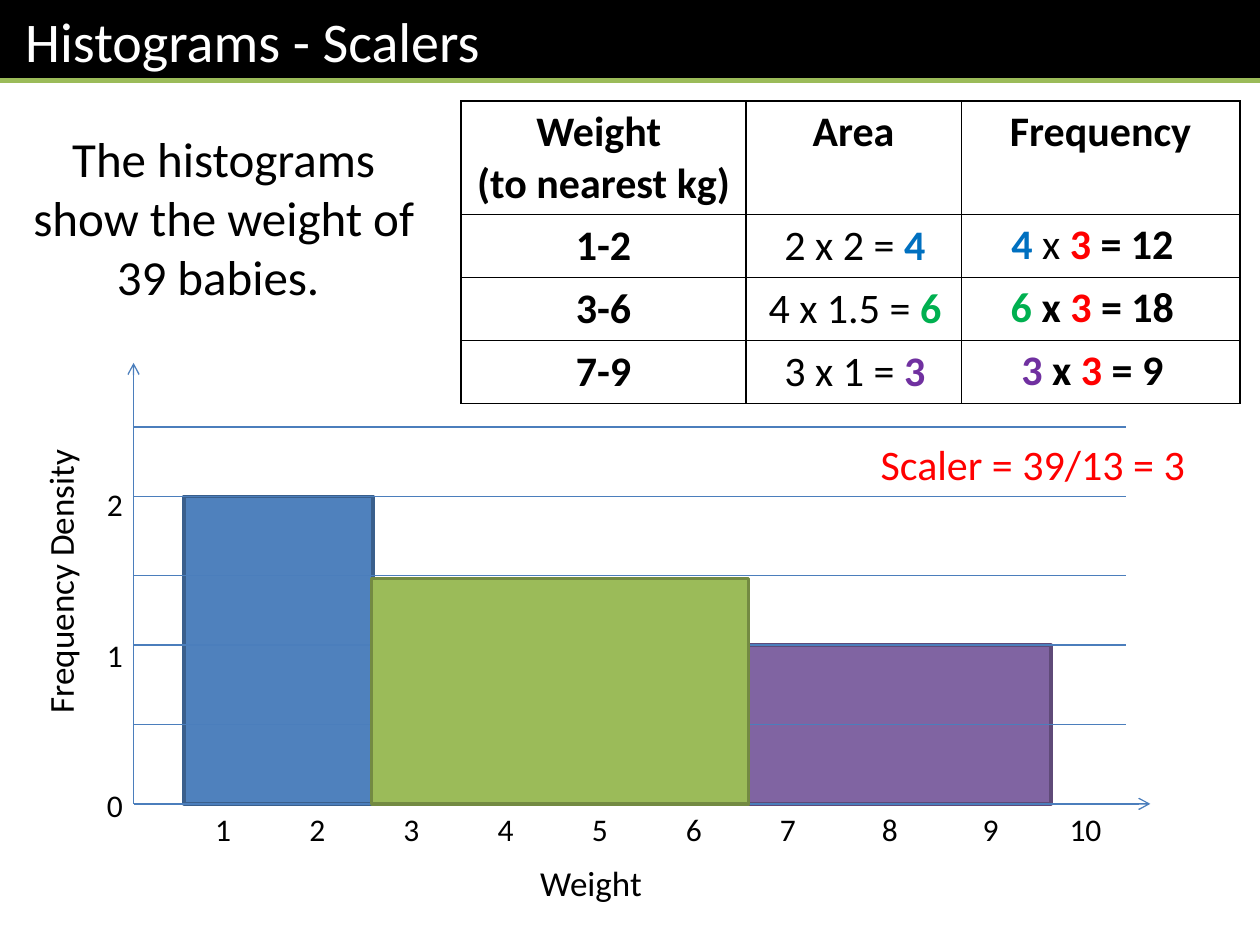
from dataclasses import dataclass
from typing import NamedTuple

from lxml import etree
from pptx import Presentation
from pptx.dml.color import RGBColor
from pptx.enum.shapes import MSO_CONNECTOR, MSO_SHAPE
from pptx.enum.text import MSO_ANCHOR, MSO_AUTO_SIZE, PP_ALIGN
from pptx.oxml.ns import qn
from pptx.util import Inches, Pt

LEFT, MID = PP_ALIGN.LEFT, PP_ALIGN.CENTER
TOP, CENTRE, BOTTOM = MSO_ANCHOR.TOP, MSO_ANCHOR.MIDDLE, MSO_ANCHOR.BOTTOM
FIXED = MSO_AUTO_SIZE.NONE
RECT, LINE = MSO_SHAPE.RECTANGLE, MSO_CONNECTOR.STRAIGHT

BLACK = RGBColor(0x00, 0x00, 0x00)
WHITE = RGBColor(0xFF, 0xFF, 0xFF)
RED = RGBColor(0xFF, 0x00, 0x00)
BLUE = RGBColor(0x00, 0x70, 0xC0)
GREEN = RGBColor(0x00, 0xB0, 0x50)
PURPLE = RGBColor(0x70, 0x30, 0xA0)
AXIS = RGBColor(0x4B, 0x7E, 0xBC)
LIME = RGBColor(0x9B, 0xBB, 0x59)
FONT = "Calibri"

# The slide is a grid of 100 columns by 75 rows
COLS, ROWS = 100, 75
WIDE, HIGH = Inches(10), Inches(7.5)


def col(n: float) -> int:
    return round(WIDE * n / COLS)


def row(n: float) -> int:
    return round(HIGH * n / ROWS)


class Box(NamedTuple):
    x: float
    y: float
    w: float
    h: float

    def place(self) -> tuple:
        return col(self.x), row(self.y), col(self.w), row(self.h)


class Span(NamedTuple):
    text: str
    color: RGBColor = BLACK
    bold: bool = False


@dataclass
class Bar:
    x: float
    w: float
    top: float
    fill: RGBColor
    edge: RGBColor


@dataclass
class Label:
    box: Box
    lines: list
    size: int
    color: RGBColor = BLACK
    align: PP_ALIGN = LEFT
    anchor: MSO_ANCHOR = TOP
    turn: int = 0
    gap: float = 0


@dataclass
class Grid:
    x: float
    y: float
    widths: list
    heights: list
    cells: list  # rows of cells, each a list of paragraphs made of spans
    ruled: bool = False


# Histogram: axes meet at (ZERO_X, ZERO_Y)
ZERO_X, ZERO_Y = 10.6, 63.8
RULES = [57.5, 51.2, 45.7, 39.4, 33.9]
BLUE_BAR = Bar(14.6, 15, 39.4, RGBColor(0x4F, 0x81, 0xBD), RGBColor(0x3A, 0x5F, 0x8C))
LIME_BAR = Bar(29.5, 29.9, 45.9, LIME, RGBColor(0x73, 0x8A, 0x42))
PLUM_BAR = Bar(59.4, 24, 51.2, RGBColor(0x80, 0x64, 0xA2), RGBColor(0x5F, 0x4A, 0x78))
TABS = [7.47 * n for n in range(1, 7)] + [52.9, 60.9, 67.8]

LABELS = [
    Label(Box(7.5, 31.6, 4.7, 34.3), ["2", "1", "0"], 18, anchor=BOTTOM, gap=64.5),
    Label(Box(-8.2, 42.4, 26, 4.4), ["Frequency Density"], 20, turn=270),
    Label(Box(41, 67.9, 11.8, 4.4), ["Weight"], 20, align=MID),
    Label(Box(1.2, 9.7, 33.1, 15.1),
          ["The histograms show the weight of 39 babies. "], 28, align=MID),
    Label(Box(68.9, 34.3, 26.8, 5), ["Scaler = 39/13 = 3"], 24, RED),
]


def head(*lines: str) -> list:
    return [[Span(text, bold=True)] for text in lines]


def area(sum_: str, value: str, color: RGBColor) -> list:
    return [[[Span(f"{sum_} = "), Span(value, color, True)]]]


def freq(value: str, total: str, color: RGBColor, bold: bool = True) -> list:
    return [[[Span(value, color, True), Span(" x ", bold=bold),
              Span("3 ", RED, True), Span(f"= {total}", bold=True)]]]


GRIDS = [
    Grid(36.6, 8, [22.6, 17.1, 22.1], [9, 5, 5, 5],
         [[head("Weight ", "(to nearest kg)"), head("Area"), head("Frequency")]]
         + [[head(name), [], []] for name in ("1-2", "3-6", "7-9")], ruled=True),
    Grid(59.7, 17, [16.3], [5, 5, 5],
         [area("2 x 2", "4", BLUE), area("4 x 1.5", "6", GREEN),
          area("3 x 1", "3", PURPLE)]),
    Grid(76.1, 16.9, [21.2], [5, 5, 5],
         [freq("4", "12", BLUE, False), freq("6", "18", GREEN),
          freq("3", "9", PURPLE)]),
]


def style(para, size: int, color: RGBColor, align: PP_ALIGN) -> None:
    para.alignment = align
    para.font.name, para.font.size = FONT, Pt(size)
    para.font.color.rgb = color


def write(slide, item: Label):
    shape = slide.shapes.add_textbox(*item.box.place())
    shape.rotation = item.turn
    frame = shape.text_frame
    frame.word_wrap, frame.vertical_anchor = True, item.anchor
    frame.text = "\n".join(item.lines)
    for n, para in enumerate(frame.paragraphs):
        style(para, item.size, item.color, item.align)
        if n and item.gap:
            para.space_before = Pt(item.gap)
    return shape


def stroke(slide, x1: float, y1: float, x2: float, y2: float,
           color: RGBColor = AXIS, width: float = 0.75, arrow: bool = False) -> None:
    line = slide.shapes.add_connector(LINE, col(x1), row(y1), col(x2), row(y2))
    line.line.color.rgb, line.line.width = color, Pt(width)
    if arrow:
        etree.SubElement(line.line._get_or_add_ln(), qn("a:tailEnd"), type="arrow")
    etree.SubElement(line._element.spPr, qn("a:effectLst"))


def draw_bar(slide, bar: Bar) -> None:
    box = Box(bar.x, bar.top, bar.w, ZERO_Y - bar.top)
    shape = slide.shapes.add_shape(RECT, *box.place())
    shape.shadow.inherit = False
    shape.fill.solid()
    shape.fill.fore_color.rgb = bar.fill
    shape.line.color.rgb, shape.line.width = bar.edge, Pt(2)


def border(cell, ruled: bool) -> None:
    props = cell._tc.get_or_add_tcPr()
    for side in ("lnL", "lnR", "lnT", "lnB"):
        edge = etree.SubElement(props, qn(f"a:{side}"), w=str(Pt(1)))
        paint = etree.SubElement(edge, qn("a:solidFill" if ruled else "a:noFill"))
        if ruled:
            etree.SubElement(paint, qn("a:srgbClr"), val=str(BLACK))


def draw_grid(slide, grid: Grid) -> None:
    box = Box(grid.x, grid.y, sum(grid.widths), sum(grid.heights))
    table = slide.shapes.add_table(
        len(grid.heights), len(grid.widths), *box.place()).table
    table.first_row = table.horz_banding = False
    for n, width in enumerate(grid.widths):
        table.columns[n].width = col(width)
    for r, (height, cells) in enumerate(zip(grid.heights, grid.cells)):
        table.rows[r].height = row(height)
        for c, lines in enumerate(cells):
            cell = table.cell(r, c)
            border(cell, grid.ruled)
            cell.fill.background()
            for n, spans in enumerate(lines):
                frame = cell.text_frame
                para = frame.add_paragraph() if n else frame.paragraphs[0]
                style(para, 24, BLACK, MID)
                for span in spans:
                    run = para.add_run()
                    run.text, run.font.bold = span.text, span.bold
                    run.font.color.rgb = span.color


def main() -> None:
    deck = Presentation()
    deck.slide_width, deck.slide_height = WIDE, HIGH
    slide = deck.slides.add_slide(deck.slide_layouts[5])

    # Title band
    title = slide.shapes.title
    title.left, title.top, title.width, title.height = Box(0, 0, COLS, 6.4).place()
    title.fill.solid()
    title.fill.fore_color.rgb = BLACK
    frame = title.text_frame
    frame.text = "Histograms - Scalers"
    frame.auto_size, frame.vertical_anchor = FIXED, CENTRE
    frame.margin_left = col(2)
    style(frame.paragraphs[0], 32, WHITE, LEFT)
    stroke(slide, 0, 6.4, COLS, 6.4, LIME, 3)

    # Histogram, with the middle bar in front of the rules
    draw_bar(slide, BLUE_BAR)
    draw_bar(slide, PLUM_BAR)
    stroke(slide, ZERO_X, ZERO_Y, ZERO_X, 28.8, arrow=True)
    stroke(slide, ZERO_X, ZERO_Y, 91.3, ZERO_Y, arrow=True)
    for y in RULES:
        stroke(slide, ZERO_X, y, 89.4, y)
    draw_bar(slide, LIME_BAR)

    # Labels, with the weights set on tab stops
    for item in LABELS:
        write(slide, item)
    marks = "\t".join(str(n) for n in range(1, 11))
    scale = write(slide, Label(Box(16.1, ZERO_Y, 73.2, 4), [marks], 18))
    stops = etree.Element(qn("a:tabLst"))
    for x in TABS:
        etree.SubElement(stops, qn("a:tab"), pos=str(col(x)), algn="l")
    scale.text_frame.paragraphs[0]._p.get_or_add_pPr().insert(0, stops)

    # Tables
    for grid in GRIDS:
        draw_grid(slide, grid)
    deck.save("out.pptx")


if __name__ == "__main__":
    main()
